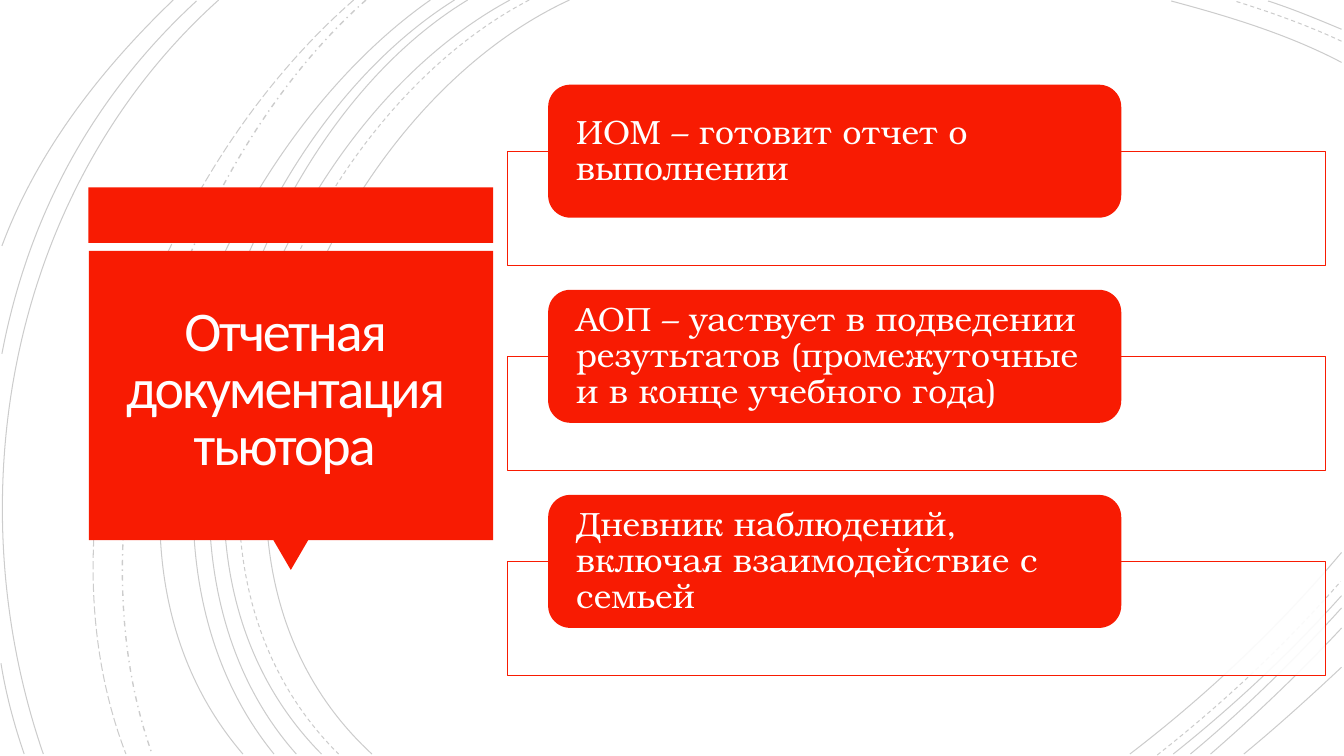
from dataclasses import dataclass

from lxml import etree
from pptx import Presentation
from pptx import util as u
from pptx.dml.color import RGBColor
from pptx.enum import dml, shapes, text
from pptx.oxml.ns import qn


@dataclass(frozen=True)
class Theme:
    accent: str = "F81B02"
    paper: str = "FFFFFF"
    title_ink: str = "FFFEFF"
    arc: str = "000000"
    title_font: str = "Calibri"
    card_font: str = "TeX Gyre Bonum"
    title_size: float = 40
    card_size: float = 24
    hairline: float = 0.75


THEME = Theme()
DASH = dml.MSO_LINE.DASH
LONG_DASH = dml.MSO_LINE.LONG_DASH
DASH_DOT = dml.MSO_LINE.DASH_DOT

TITLE = "Отчетная документация тьютора"
DUTIES = [
    "ИОМ – готовит отчет о выполнении",
    "АОП – уаствует в подведении резутьтатов (промежуточные и в конце учебного года)",
    "Дневник наблюдений, включая взаимодействие с семьей",
]

ARCS = [
    ((406.8, 0), (226.8, 82.8), (103, 388.8), (265.7, 538.6), None),
    ((958.3, 44.6), (920.2, 24.5), (877, 11.5), (836.6, 0.7), None),
    ((807.1, 538.6), (861.8, 496.8), (913.7, 447.8), (958.3, 394.6), None),
    ((378, 0), (205.2, 90), (88.6, 386.6), (241.9, 538.6), DASH),
    ((958.3, 29.5), (933.8, 18), (907.2, 8.6), (882, 0.7), DASH),
    ((826.6, 539.3), (873.4, 502.6), (918, 460.8), (957.6, 415.4), DASH),
    ((364.3, 0), (194.4, 91.4), (79.2, 386.6), (229.7, 538.6), None),
    ((958.3, 20.9), (941, 13.7), (923.8, 6.5), (905.8, 0.7), None),
    ((838.1, 538.6), (880.6, 504.7), (921.6, 466.6), (958.3, 425.5), None),
    ((334.1, 0), (175.7, 95.8), (79.2, 389.5), (211.7, 538.6), None),
    ((850.3, 538.6), (888.5, 506.9), (924.5, 471.6), (958.3, 434.2), None),
    ((324.7, 0), (166.3, 99.4), (69.8, 383.8), (195.8, 538.6), None),
    ((864.7, 538.6), (897.1, 510.5), (928.8, 480.2), (958.3, 448.6), None),
    ((307.4, 0), (156.2, 105.8), (38.2, 380.9), (173.5, 538.6), None),
    ((888.5, 538.6), (912.2, 519.1), (935.3, 498.2), (958.3, 476.6), None),
    ((261.4, 0), (126.7, 119.5), (46.8, 366.5), (108.7, 538.6), DASH_DOT),
    ((252.7, 0), (113, 121.7), (20.9, 359.3), (90, 538.6), LONG_DASH),
    ((156.2, 0), (7.9, 133.2), (-33.1, 352.8), (31, 538.6), None),
    ((140.4, 0.7), (66.2, 69.1), (20.2, 154.1), (1.4, 252.7), None),
    ((0.7, 473.8), (4.3, 496.1), (10.1, 517.7), (17.3, 538.6), None),
    ((123.8, 0), (72, 49.7), (26.6, 108), (1.4, 175.7), None),
]


def paint(fill, color, opacity=100):
    fill.solid()
    fill.fore_color.rgb = RGBColor.from_string(color)
    if opacity < 100:
        for tone in fill._xPr.iter(qn("a:srgbClr")):
            etree.SubElement(tone, qn("a:alpha")).set("val", str(opacity * 1000))


def block(slide, kind, box, color, opacity=100, outline=None):
    shape = slide.shapes.add_shape(kind, *map(u.Pt, box))
    shape.shadow.inherit = False
    paint(shape.fill, color, opacity)
    if outline:
        paint(shape.line.fill, outline)
        shape.line.width = u.Pt(THEME.hairline)
    else:
        shape.line.fill.background()
    return shape


def write(shape, words, *, font, size, color, align, spacing, inset, tracking=0):
    frame = shape.text_frame
    frame.word_wrap = True
    frame.vertical_anchor = text.MSO_ANCHOR.MIDDLE
    (frame.margin_left, frame.margin_top,
     frame.margin_right, frame.margin_bottom) = map(u.Pt, inset)
    paragraph = frame.paragraphs[0]
    paragraph.alignment = align
    paragraph.line_spacing = spacing
    run = paragraph.add_run()
    run.text = words
    run.font.name = font
    run.font.size = u.Pt(size)
    run.font.color.rgb = RGBColor.from_string(color)
    if tracking:
        run.font._element.set("spc", str(int(tracking * 100)))


def curve(slide, knots):
    first, *rest = [(u.Pt(x), u.Pt(y)) for x, y in knots]
    builder = slide.shapes.build_freeform(*first)
    builder.add_line_segments(rest, close=False)
    arc = builder.convert_to_shape()
    outline = next(arc._element.iter(qn("a:path")))
    bend = etree.SubElement(outline, qn("a:cubicBezTo"))
    for segment in outline.findall(qn("a:lnTo")):
        bend.append(segment[0])
        outline.remove(segment)
    return arc


def draw_arcs(slide, box):
    left, top = box[:2]
    for *knots, dash in ARCS:
        arc = curve(slide, [(left + x, top + y) for x, y in knots])
        arc.shadow.inherit = False
        arc.fill.background()
        paint(arc.line.fill, THEME.arc, 20)
        arc.line.width = u.Pt(1 if dash == DASH_DOT else THEME.hairline)
        if dash:
            arc.line.dash_style = dash


def draw_title(slide, box):
    left, top, width, height = box
    strip, gap, tip_width, tip_height = 39.6, 5.8, 25.2, 21.6
    panel_top = top + strip + gap
    panel_height = height - strip - gap - tip_height
    rectangle = shapes.MSO_SHAPE.RECTANGLE
    block(slide, rectangle, (left, top, width, strip), THEME.accent)
    tip = block(slide, shapes.MSO_SHAPE.ISOSCELES_TRIANGLE,
                (left + (width - tip_width) / 2, panel_top + panel_height - 0.4,
                 tip_width, tip_height), THEME.accent)
    tip.rotation = 180
    block(slide, rectangle, (left + 0.4, panel_top, width - 0.4, panel_height),
          THEME.accent)
    heading = slide.shapes.add_textbox(
        *map(u.Pt, (left + 2.3, panel_top + 3.6, 275.8, 193.7)))
    write(heading, TITLE, font=THEME.title_font, size=THEME.title_size,
          color=THEME.title_ink, align=text.PP_ALIGN.CENTER, spacing=0.85,
          inset=(18, 18, 18, 18), tracking=-1.5)


def draw_duty(slide, box, words):
    left, top, width, height = box
    pill_height, frame_height = 95, 81.4
    block(slide, shapes.MSO_SHAPE.RECTANGLE,
          (left, top + height - frame_height, width, frame_height),
          THEME.paper, 90, THEME.accent)
    pill = block(slide, shapes.MSO_SHAPE.ROUNDED_RECTANGLE,
                 (left + width * 0.05, top, width * 0.7, pill_height), THEME.accent)
    write(pill, words, font=THEME.card_font, size=THEME.card_size,
          color=THEME.paper, align=text.PP_ALIGN.LEFT, spacing=0.9,
          inset=(15.4, 0.5, 15, 0))


def draw_duties(slide, box, pitch=146.5):
    left, top, width, height = box
    card_height = height - pitch * (len(DUTIES) - 1)
    for index, words in enumerate(DUTIES):
        draw_duty(slide, (left, top + index * pitch, width, card_height), words)


def main():
    deck = Presentation()
    deck.slide_width, deck.slide_height = u.Pt(960), u.Pt(540)
    slide = deck.slides.add_slide(deck.slide_layouts[6])
    draw_arcs(slide, (0, 0, 960, 540))
    draw_title(slide, (63.1, 133.9, 289.2, 273.6))
    draw_duties(slide, (362.3, 60.5, 584.8, 422))
    deck.save("out.pptx")


if __name__ == "__main__":
    main()
